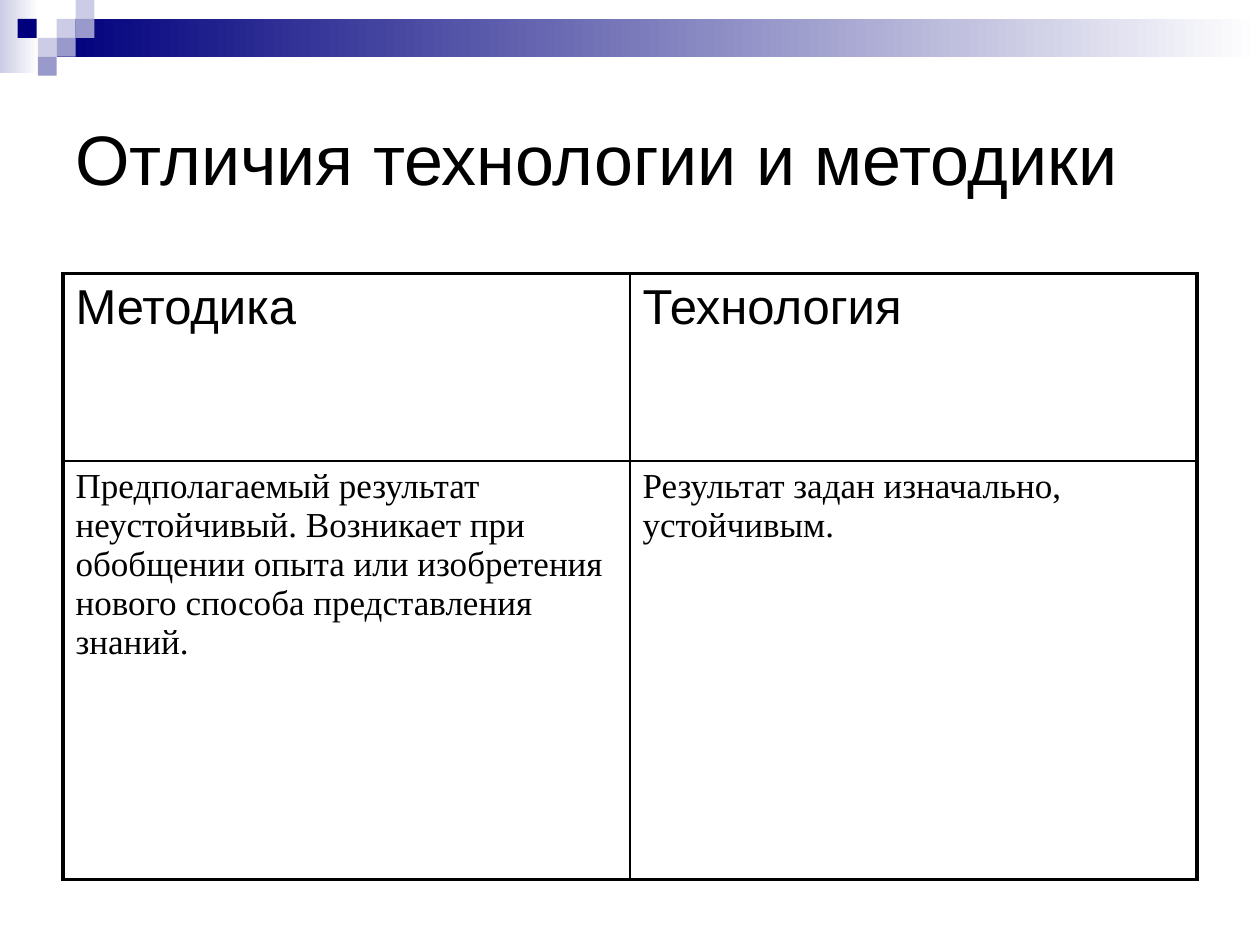
from lxml.etree import SubElement
from pptx import Presentation
from pptx.dml.color import RGBColor
from pptx.enum.shapes import MSO_SHAPE
from pptx.enum.text import MSO_ANCHOR, PP_ALIGN
from pptx.oxml.ns import qn
from pptx.util import Inches, Pt

COLORS = {
    "text": "000000",
    "navy": "00007D",
    "mid": "9999CC",
    "pale": "CCCCE6",
    "white": "FFFFFF",
}
SQUARE = 0.15
SQUARES = [
    (0.45, 0.15, "pale"),
    (0.6, 0, "pale"),
    (0.6, 0.15, "mid"),
    (0.3, 0.3, "pale"),
    (0.14, 0.15, "navy"),
    (0.45, 0.3, "mid"),
    (0.3, 0.45, "mid"),
]
ROWS = [
    ["Методика", "Технология"],
    [
        "Предполагаемый результат\nнеустойчивый. Возникает при обобщении опыта "
        "или изобретения нового способа представления знаний.",
        "Результат задан изначально, устойчивым.",
    ],
]
ROW_HEIGHTS = [1.49, 3.32]
ROW_FONTS = [("Arial", 28), ("Times New Roman", 20)]
OUTER, INNER = 2.25, 1


def rgb(name):
    return RGBColor.from_string(COLORS[name])


def set_font(p, name, size):
    p.font.name = name
    p.font.size = Pt(size)
    p.font.color.rgb = rgb("text")


def add_rect(s, x, y, w, h, color, fade_to=None):
    sp = s.shapes.add_shape(
        MSO_SHAPE.RECTANGLE, Inches(x), Inches(y), Inches(w), Inches(h)
    )
    sp.shadow.inherit = False
    sp.line.fill.background()
    if fade_to is None:
        sp.fill.solid()
        sp.fill.fore_color.rgb = rgb(color)
        return
    sp.fill.gradient()
    sp.fill.gradient_angle = 0
    for stop, name, position in zip(sp.fill.gradient_stops, (color, fade_to), (0, 1)):
        stop.color.rgb = rgb(name)
        stop.position = position


def add_banner(s):
    add_rect(s, 0, 0, 0.31, 0.58, "pale", "white")
    add_rect(s, 0.45, 0.15, 9.55, 0.3, "navy", "white")
    for x, y, color in SQUARES:
        add_rect(s, x, y, SQUARE, SQUARE, color)


def format_title(s, text):
    title = s.shapes.title
    title.left, title.top = Inches(0.5), Inches(0.5)
    title.width, title.height = Inches(9), Inches(1.5)
    tf = title.text_frame
    tf.text = text
    tf.vertical_anchor = MSO_ANCHOR.MIDDLE
    p = tf.paragraphs[0]
    p.alignment = PP_ALIGN.LEFT
    set_font(p, "Arial", 40)


def set_borders(cell, widths):
    tcPr = cell._tc.get_or_add_tcPr()
    for side, width in widths.items():
        ln = SubElement(tcPr, qn(f"a:ln{side}"), w=str(Pt(width)))
        fill = SubElement(ln, qn("a:solidFill"))
        SubElement(fill, qn("a:srgbClr"), val=COLORS["text"])


def add_comparison(s):
    n_rows, n_cols = len(ROWS), len(ROWS[0])
    table = s.shapes.add_table(
        n_rows, n_cols, Inches(0.5), Inches(2.17), Inches(9), Inches(sum(ROW_HEIGHTS))
    ).table
    table.first_row = table.horz_banding = False
    for i, texts in enumerate(ROWS):
        table.rows[i].height = Inches(ROW_HEIGHTS[i])
        for j, text in enumerate(texts):
            cell = table.cell(i, j)
            cell.text = text
            for p in cell.text_frame.paragraphs:
                set_font(p, *ROW_FONTS[i])
            set_borders(cell, {
                "L": OUTER if j == 0 else INNER,
                "R": OUTER if j == n_cols - 1 else INNER,
                "T": OUTER if i == 0 else INNER,
                "B": OUTER if i == n_rows - 1 else INNER,
            })
            cell.fill.background()


def main():
    prs = Presentation()
    prs.slide_width, prs.slide_height = Inches(10), Inches(7.5)
    s = prs.slides.add_slide(prs.slide_layouts[5])
    add_banner(s)
    format_title(s, "Отличия технологии и методики")
    add_comparison(s)
    prs.save("out.pptx")


if __name__ == "__main__":
    main()
